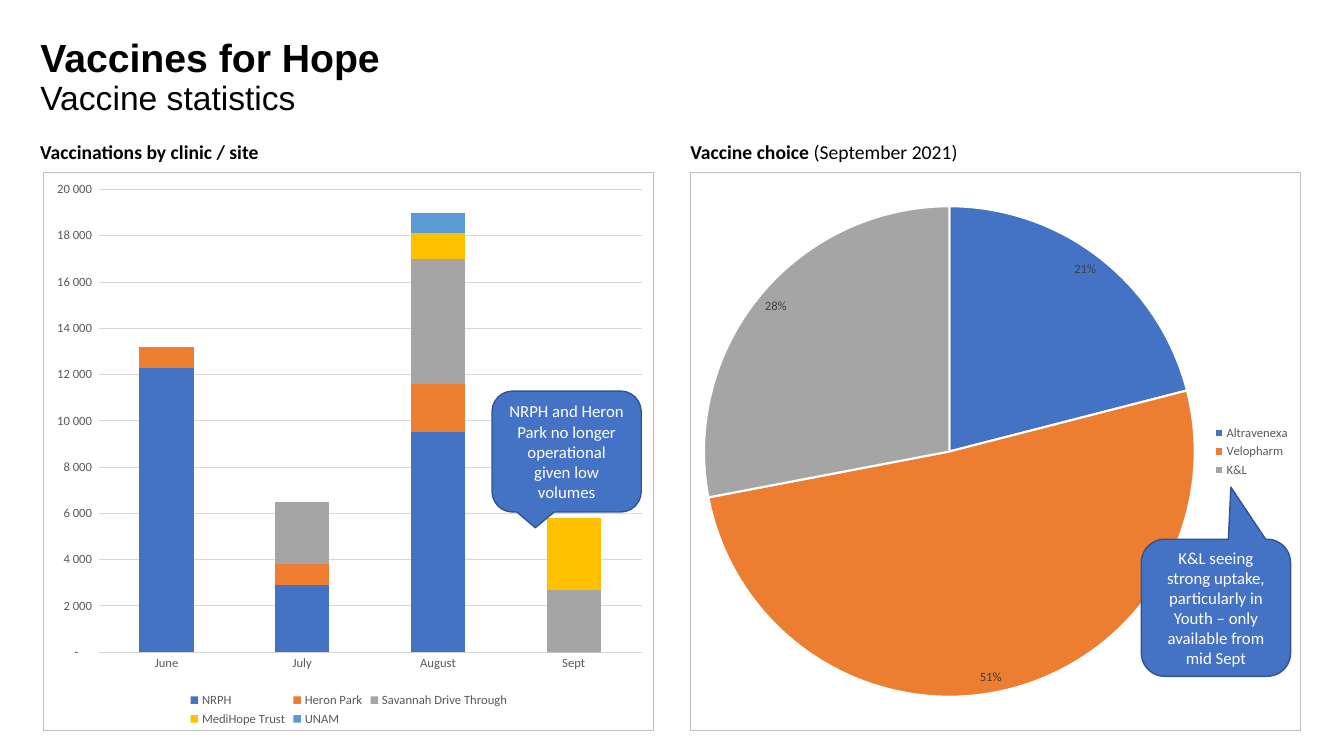
from lxml import etree
from pptx import Presentation
from pptx.chart.data import CategoryChartData
from pptx.dml.color import RGBColor
from pptx.enum.chart import XL_CHART_TYPE, XL_LABEL_POSITION, XL_LEGEND_POSITION, XL_TICK_MARK
from pptx.enum.shapes import MSO_SHAPE
from pptx.enum.text import MSO_ANCHOR, PP_ALIGN
from pptx.oxml import parse_xml
from pptx.oxml.ns import nsdecls, qn
from pptx.util import Inches, Pt

STACK, PIE = XL_CHART_TYPE.COLUMN_STACKED, XL_CHART_TYPE.PIE
BOTTOM, RIGHT = XL_LEGEND_POSITION.BOTTOM, XL_LEGEND_POSITION.RIGHT
LEFT, CENTER = PP_ALIGN.LEFT, PP_ALIGN.CENTER
NO_TICK = XL_TICK_MARK.NONE

BLACK = RGBColor(0, 0, 0)
WHITE = RGBColor(255, 255, 255)
GREY = RGBColor(0x59, 0x59, 0x59)
DARK = RGBColor(0x40, 0x40, 0x40)
GRID = RGBColor(0xD9, 0xD9, 0xD9)
BLUE = RGBColor(0x44, 0x72, 0xC4)
EDGE = RGBColor(0x32, 0x54, 0x91)
COLORS = [BLUE, RGBColor(0xED, 0x7D, 0x31), RGBColor(0xA5, 0xA5, 0xA5),
          RGBColor(0xFF, 0xC0, 0x00), RGBColor(0x5B, 0x9B, 0xD5)]
FORMAT = r'_-* #\ ##0_-;\-* #\ ##0_-;_-* "-"??_-;_-'

TITLE = [("Vaccines for Hope\v", 28, True), ("Vaccine statistics", 24, False)]
HEADS = [
    (0.3, 2.58, [("Vaccinations by clinic / site", 14, True)]),
    (6.75, 3, [("Vaccine choice ", 14, True), ("(September 2021)", 14, False)]),
]
MONTHS = ["June", "July", "August", "Sept"]
SITES = {
    "NRPH": [12300, 2900, 9500, 0],
    "Heron Park": [900, 900, 2100, 0],
    "Savannah Drive Through": [0, 2700, 5400, 2700],
    "MediHope Trust": [0, 0, 1100, 3100],
    "UNAM": [None, None, 900, None],
}
BRANDS = ["Altravenexa", "Velopharm", "K&L"]
SHARES = {"Series 1": [21, 51, 28]}
NOTES = [
    ((4.88, 3.88, 1.48, 1.2), (-0.21, 0.63, 0.17),
     "NRPH and Heron Park no longer operational given low volumes"),
    ((11.32, 5.35, 1.48, 1.36), (0.1, -0.88, 0.17),
     "K&L seeing strong uptake, particularly in Youth – only available from mid Sept"),
]


def style(font, size, color, name="Calibri", bold=False):
    font.size, font.name, font.bold = Pt(size), name, bold
    font.color.rgb = color


def write(frame, runs, name="Calibri", color=BLACK, align=LEFT,
          anchor=MSO_ANCHOR.TOP, spacing=None):
    """Fill a text frame with one paragraph of (text, size, bold) runs."""
    frame.word_wrap = True
    frame.vertical_anchor = anchor
    para = frame.paragraphs[0]
    para.alignment, para.line_spacing = align, spacing
    for text, size, bold in runs:
        body, *rest = text.split("\v")
        run = para.add_run()
        run.text = body
        style(run.font, size, color, name, bold)
        if rest:
            para.add_line_break()


def place(chart, x, y, w, h):
    """Fix the inner plot area, in fractions of the chart frame."""
    area = chart.element.find(".//" + qn("c:plotArea"))
    old = area.find(qn("c:layout"))
    if old is not None:
        area.remove(old)
    layout = etree.Element(qn("c:layout"))
    manual = etree.SubElement(layout, qn("c:manualLayout"))
    for tag, val in (("layoutTarget", "inner"), ("xMode", "edge"), ("yMode", "edge"),
                     ("x", x), ("y", y), ("w", w), ("h", h)):
        etree.SubElement(manual, qn("c:" + tag)).set("val", str(val))
    area.insert(0, layout)


def add_chart(slide, kind, left, cats, series, legend, plot):
    data = CategoryChartData(number_format=FORMAT)
    data.categories = cats
    for name, vals in series.items():
        data.add_series(name, vals)
    chart = slide.shapes.add_chart(kind, Inches(left), Inches(1.71), Inches(6.06),
                                   Inches(5.54), data).chart
    style(chart.font, 10, BLACK)
    chart.has_title = False
    chart.has_legend = True
    chart.legend.position = legend
    chart.legend.include_in_layout = False
    style(chart.legend.font, 9, GREY)
    place(chart, *plot)
    border = parse_xml(
        f'<c:spPr {nsdecls("c", "a")}><a:solidFill><a:srgbClr val="FFFFFF"/></a:solidFill>'
        '<a:ln w="9525"><a:solidFill><a:srgbClr val="BFBFBF"/></a:solidFill></a:ln></c:spPr>')
    chart.element.find(qn("c:chart")).addnext(border)
    return chart


def add_pie(slide):
    chart = add_chart(slide, PIE, 6.84, BRANDS, SHARES, RIGHT, (0.02, 0.06, 0.81, 0.88))
    plot = chart.plots[0]
    plot.vary_by_categories = True
    for i in range(len(BRANDS)):
        form = plot.series[0].points[i].format
        form.fill.solid()
        form.fill.fore_color.rgb = COLORS[i]
        form.line.color.rgb = WHITE
        form.line.width = Pt(1.5)
    plot.has_data_labels = True
    labels = plot.data_labels
    labels.show_value, labels.show_percentage = False, True
    labels.number_format, labels.number_format_is_linked = "0%", False
    labels.position = XL_LABEL_POSITION.INSIDE_END
    style(labels.font, 9, DARK)


def add_columns(slide):
    chart = add_chart(slide, STACK, 0.43, MONTHS, SITES, BOTTOM, (0.09, 0.03, 0.89, 0.83))
    plot = chart.plots[0]
    plot.vary_by_categories = False
    plot.gap_width, plot.overlap = 150, 100
    for series, color in zip(plot.series, COLORS):
        series.format.fill.solid()
        series.format.fill.fore_color.rgb = color
    months, counts = chart.category_axis, chart.value_axis
    for axis in (months, counts):
        axis.major_tick_mark = axis.minor_tick_mark = NO_TICK
        style(axis.tick_labels.font, 9, GREY)
    counts.minimum_scale, counts.maximum_scale, counts.major_unit = 0, 20000, 2000
    counts.tick_labels.number_format = FORMAT
    counts.tick_labels.number_format_is_linked = False
    counts.format.line.fill.background()
    for line in (months.format.line, counts.major_gridlines.format.line):
        line.color.rgb = GRID
        line.width = Pt(0.75)


def add_note(slide, box, adjust, text):
    note = slide.shapes.add_shape(MSO_SHAPE.ROUNDED_RECTANGULAR_CALLOUT, *map(Inches, box))
    for i, val in enumerate(adjust):
        note.adjustments[i] = val
    note.shadow.inherit = False
    note.fill.solid()
    note.fill.fore_color.rgb = BLUE
    note.line.color.rgb = EDGE
    note.line.width = Pt(1)
    write(note.text_frame, [(text, 12, False)], color=WHITE, align=CENTER,
          anchor=MSO_ANCHOR.MIDDLE)


def main():
    prs = Presentation()
    prs.slide_width, prs.slide_height = Inches(13.33), Inches(7.5)
    slide = prs.slides.add_slide(prs.slide_layouts[5])
    add_pie(slide)
    add_columns(slide)
    title = slide.shapes.title
    title.left, title.top = Inches(0.3), Inches(0.05)
    title.width, title.height = Inches(11.5), Inches(1.45)
    write(title.text_frame, TITLE, name="Arial", anchor=MSO_ANCHOR.MIDDLE, spacing=0.9)
    for left, width, runs in HEADS:
        head = slide.shapes.add_textbox(Inches(left), Inches(1.31), Inches(width), Inches(0.35))
        write(head.text_frame, runs, spacing=1.14)
    for note in NOTES:
        add_note(slide, *note)
    prs.save("out.pptx")


if __name__ == "__main__":
    main()
